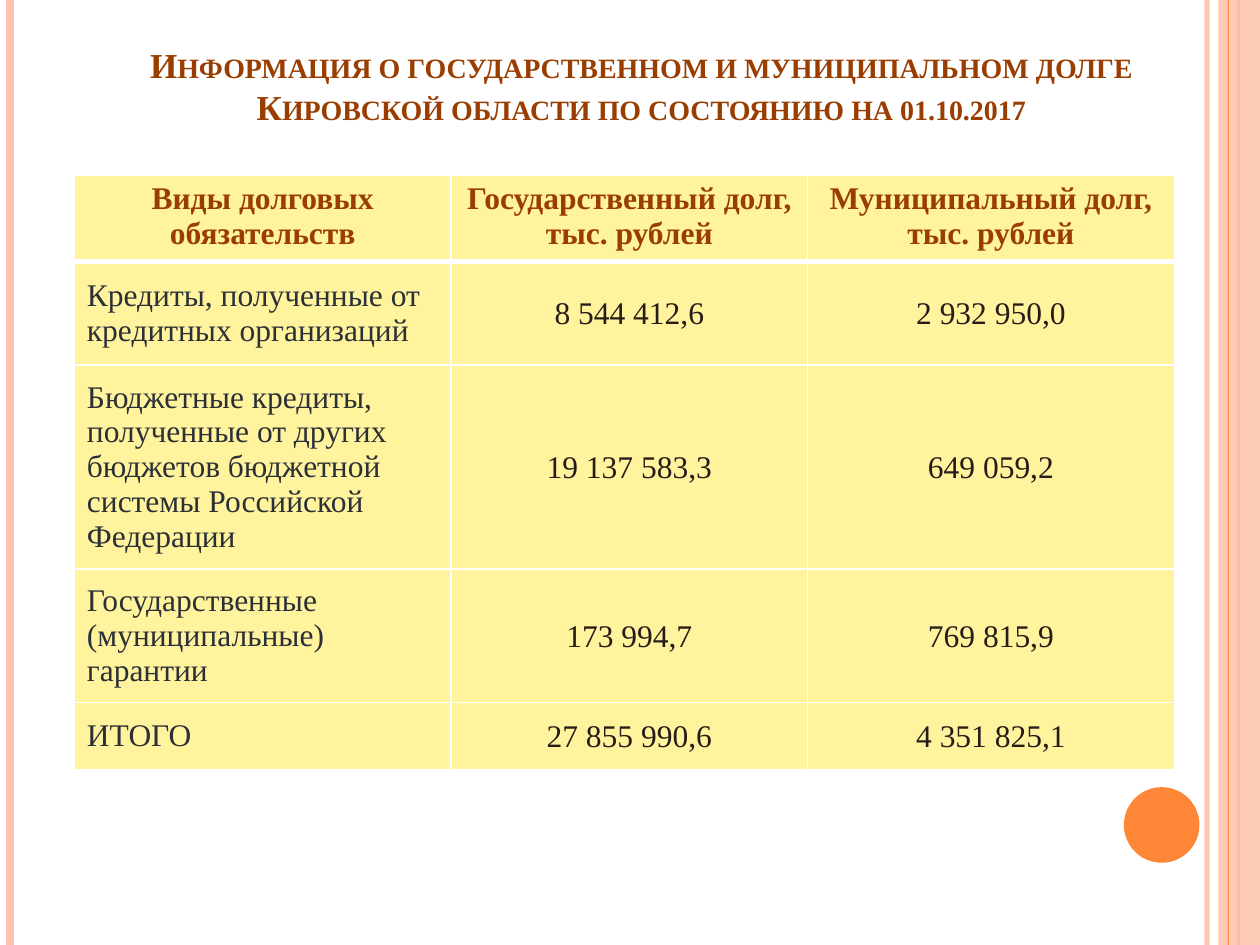
from dataclasses import dataclass

from lxml import etree
from pptx import Presentation
from pptx import util as u
from pptx.dml.color import RGBColor
from pptx.enum import shapes, text
from pptx.oxml import ns


@dataclass(frozen=True)
class Theme:
    font: str = "Times New Roman"
    title_size: float = 20
    table_size: float = 18
    heading: str = "9A3D01"
    label: str = "2B2F36"
    number: str = "271D18"
    cell: str = "FFF39D"
    grid: str = "FFFFFF"
    accent: str = "FE8637"
    pale: str = "FEC3AE"


TITLE = ("Информация о государственном и муниципальном долге "
         "Кировской области по состоянию на 01.10.2017")
DEBT_ROWS = [
    ("Виды долговых обязательств", "Государственный долг, тыс. рублей",
     "Муниципальный долг, тыс. рублей"),
    ("Кредиты, полученные от кредитных организаций", "8 544 412,6", "2 932 950,0"),
    ("Бюджетные кредиты, полученные от других бюджетов бюджетной системы "
     "Российской Федерации", "19 137 583,3", "649 059,2"),
    ("Государственные (муниципальные) гарантии", "173 994,7", "769 815,9"),
    ("ИТОГО", "27 855 990,6", "4 351 825,1"),
]
COLUMN_WIDTHS = [2.99, 2.83, 2.91]
ROW_HEIGHTS = [0.69, 0.82, 1.62, 1.06, 0.53]


def write(frame, words, *, font, size, color, bold=False, small_caps=False,
          align=text.PP_ALIGN.LEFT, after=0):
    paragraph = frame.paragraphs[0]
    paragraph.alignment = align
    paragraph.space_before = u.Pt(0)
    paragraph.space_after = u.Pt(after)
    run = paragraph.add_run()
    run.text = words
    run.font.name, run.font.size, run.font.bold = font, u.Pt(size), bold
    run.font.color.rgb = RGBColor.from_string(color)
    if small_caps:
        run.font._element.set("cap", "small")


def set_opacity(element, percent):
    color = element.find(".//" + ns.qn("a:srgbClr"))
    etree.SubElement(color, ns.qn("a:alpha"), val=str(percent * 1000))


def set_borders(cell, color, widths):
    """Give the cell its left, right, top and bottom lines, in points."""
    properties = cell._tc.get_or_add_tcPr()
    for index, (side, width) in enumerate(zip("LRTB", widths)):
        edge = etree.Element(ns.qn(f"a:ln{side}"), w=str(u.Pt(width)))
        fill = etree.SubElement(edge, ns.qn("a:solidFill"))
        etree.SubElement(fill, ns.qn("a:srgbClr"), val=color)
        properties.insert(index, edge)


class DebtSlide:
    def __init__(self, deck, theme):
        self.deck, self.theme = deck, theme
        self.slide = deck.slides.add_slide(deck.slide_layouts[5])

    def place(self, left, top, width, height):
        """Turn shares of the slide's size into lengths."""
        across, down = self.deck.slide_width, self.deck.slide_height
        return [round(share * side) for share, side in
                zip((left, top, width, height), (across, down, across, down))]

    def title(self, words, area):
        title = self.slide.shapes.title
        title.left, title.top, title.width, title.height = self.place(*area)
        frame = title.text_frame
        frame.auto_size = text.MSO_AUTO_SIZE.NONE
        frame.word_wrap = True
        frame.vertical_anchor = text.MSO_ANCHOR.BOTTOM
        frame.margin_left = frame.margin_right = u.Inches(0.3)
        write(frame, words, font=self.theme.font, size=self.theme.title_size,
              color=self.theme.heading, bold=True, small_caps=True,
              align=text.PP_ALIGN.CENTER)

    def stripe(self, share, color, width, opacity=100):
        """Draw a line down the whole slide."""
        x, top, _, bottom = self.place(share, 0, 0, 1)
        line = self.slide.shapes.add_connector(
            shapes.MSO_CONNECTOR.STRAIGHT, x, top, x, bottom)
        line.line.color.rgb = RGBColor.from_string(color)
        line.line.width = u.Pt(width)
        if opacity < 100:
            set_opacity(line._element.spPr, opacity)
        etree.SubElement(line._element.spPr, ns.qn("a:effectLst"))

    def shape(self, kind, area, color, opacity=100):
        shape = self.slide.shapes.add_shape(kind, *self.place(*area))
        shape.shadow.inherit = False
        shape.fill.solid()
        shape.fill.fore_color.rgb = RGBColor.from_string(color)
        shape.line.fill.background()
        if opacity < 100:
            set_opacity(shape._element.spPr, opacity)

    def table(self, rows, area, widths, heights):
        table = self.slide.shapes.add_table(
            len(rows), len(widths), *self.place(*area)).table
        for column, width in zip(table.columns, widths):
            column.width = u.Inches(width)
        for row, height in zip(table.rows, heights):
            row.height = u.Inches(height)
        for r, row in enumerate(rows):
            for c, words in enumerate(row):
                self.cell(table.cell(r, c), words, r, c)

    def cell(self, cell, words, row, column):
        theme = self.theme
        header, label = row == 0, column == 0
        cell.fill.solid()
        cell.fill.fore_color.rgb = RGBColor.from_string(theme.cell)
        set_borders(cell, theme.grid, (1, 1, 3 if row == 1 else 1, 3 if header else 1))
        cell.vertical_anchor = text.MSO_ANCHOR.TOP if header else text.MSO_ANCHOR.MIDDLE
        if not header and not label:
            cell.margin_left = cell.margin_right = cell.margin_top = u.Inches(0.01)
            cell.margin_bottom = 0
        body_color = theme.label if label else theme.number
        is_label = label and not header
        write(cell.text_frame, words, font=theme.font, size=theme.table_size,
              color=theme.heading if header else body_color, bold=header,
              align=text.PP_ALIGN.LEFT if is_label else text.PP_ALIGN.CENTER,
              after=10 if is_label else 0)


def main():
    deck = Presentation()
    deck.slide_width, deck.slide_height = u.Inches(10), u.Inches(7.5)
    theme = Theme()
    page = DebtSlide(deck, theme)
    page.stripe(0.958, theme.pale, 3, opacity=93)
    page.stripe(0.008, theme.pale, 4.5)
    page.stripe(0.983, theme.accent, 1.5)
    page.shape(shapes.MSO_SHAPE.RECTANGLE, (0.967, 0, 0.033, 1), theme.pale, opacity=87)
    page.stripe(0.975, theme.accent, 0.75)
    page.shape(shapes.MSO_SHAPE.OVAL, (0.892, 0.833, 0.06, 0.08), theme.accent)
    page.title(TITLE, (0.035, 0.017, 0.948, 0.125))
    page.table(DEBT_ROWS, (0.059, 0.185, 0.874, 0.63), COLUMN_WIDTHS, ROW_HEIGHTS)
    deck.save("out.pptx")


if __name__ == "__main__":
    main()
